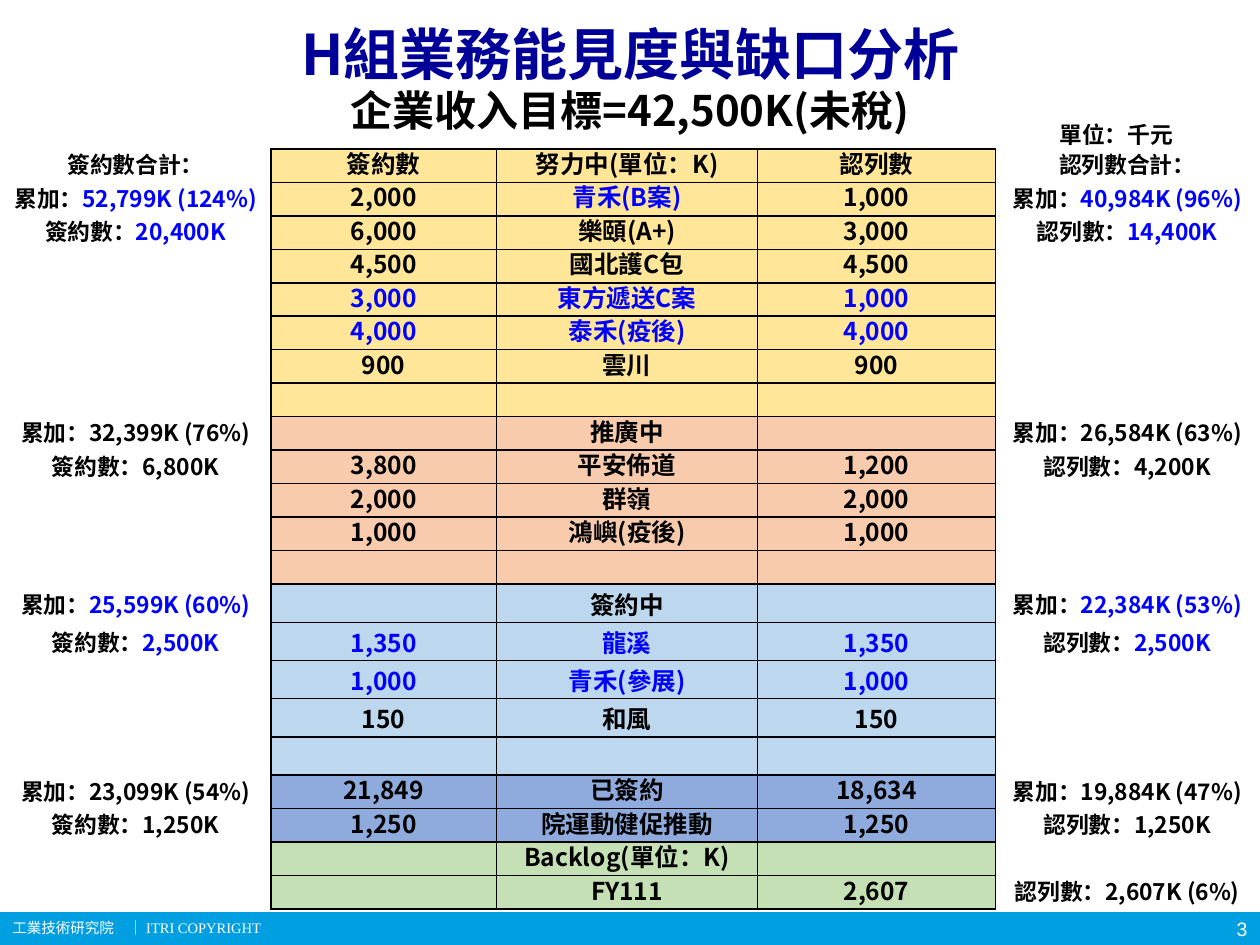
"""Build the group H business visibility and gap analysis slide."""
from lxml.etree import SubElement
from pptx import Presentation
from pptx.dml.color import RGBColor
from pptx.enum.shapes import MSO_SHAPE as Shape
from pptx.enum.text import MSO_ANCHOR as Anchor, PP_ALIGN as Align
from pptx.oxml.ns import qn
from pptx.util import Cm, Pt

COLORS = {
    "black": "000000", "white": "FFFFFF", "blue": "0000FF", "navy": "000099", "footer": "009FE2",
    "effort": "FFE699", "promotion": "F8CBAD", "signing": "BDD7EE", "signed": "8FAADC", "backlog": "C5E0B4",
}
FONT = "Noto Sans CJK SC"
SECTIONS = [
    ("effort", [
        ("簽約數合計：", "簽約數", "努力中(單位：K)", "認列數", "認列數合計："),
        ("累加：*52,799K (124%)", "2,000", "*青禾(B案)", "1,000", "累加：*40,984K (96%)"),
        ("簽約數：*20,400K", "6,000", "樂頤(A+)", "3,000", "認列數：*14,400K"),
        ("", "4,500", "國北護C包", "4,500", ""),
        ("", "*3,000", "*東方遞送C案", "*1,000", ""),
        ("", "*4,000", "*泰禾(疫後)", "*4,000", ""),
        ("", "900", "雲川", "900", ""),
        ("", "", "", "", ""),
    ]),
    ("promotion", [
        ("累加：32,399K (76%)", "", "推廣中", "", "累加：26,584K (63%)"),
        ("簽約數：6,800K", "3,800", "平安佈道", "1,200", "認列數：4,200K"),
        ("", "2,000", "群嶺", "2,000", ""),
        ("", "1,000", "鴻嶼(疫後)", "1,000", ""),
        ("", "", "", "", ""),
    ]),
    ("signing", [
        ("累加：*25,599K (60%)", "", "簽約中", "", "累加：*22,384K (53%)"),
        ("簽約數：*2,500K", "*1,350", "*龍溪", "*1,350", "認列數：*2,500K"),
        ("", "*1,000", "*青禾(參展)", "*1,000", ""),
        ("", "150", "和風", "150", ""),
        ("", "", "", "", ""),
    ]),
    ("signed", [
        ("累加：23,099K (54%)", "21,849", "已簽約", "18,634", "累加：19,884K (47%)"),
        ("簽約數：1,250K", "1,250", "院運動健促推動", "1,250", "認列數：1,250K"),
    ]),
    ("backlog", [
        ("", "", "Backlog(單位：K)", "", ""),
        ("", "", "FY111", "2,607", "認列數：2,607K (6%)"),
    ]),
]


def write(frame, text, size, color="black", accent="blue", font=FONT, asian=FONT,
          bold=True, align=Align.CENTER, spacing=None):
    para = frame.paragraphs[0]
    para.alignment = align
    if spacing:
        para.line_spacing = Pt(spacing)
    plain, _, marked = text.partition("*")
    for part, shade in ((plain, color), (marked, accent)):
        if part:
            span = para.add_run()
            span.text = part
            span.font.size = Pt(size)
            span.font.bold = bold
            span.font.color.rgb = RGBColor.from_string(COLORS[shade])
            span.font.name = font
            SubElement(span.font._element, qn("a:ea"), typeface=asian)
    if not text:
        SubElement(para._p, qn("a:endParaRPr"), sz="1000")
    return para


deck = Presentation()
deck.slide_width, deck.slide_height = Cm(25.4), Cm(19.05)
page = deck.slides.add_slide(deck.slide_layouts[6])

band = page.shapes.add_shape(Shape.RECTANGLE, Cm(0), Cm(18.39), Cm(25.4), Cm(0.66))
band.shadow.inherit = False
band.fill.solid()
band.fill.fore_color.rgb = RGBColor.from_string(COLORS["footer"])
band.line.fill.background()

number = page.shapes.add_textbox(Cm(23.93), Cm(18.39), Cm(1.47), Cm(0.66)).text_frame
credit = page.shapes.add_textbox(Cm(0), Cm(18.08), Cm(22.71), Cm(0.97)).text_frame
title = page.shapes.add_textbox(Cm(0.03), Cm(0.33), Cm(25.37), Cm(1.47)).text_frame
target = page.shapes.add_textbox(Cm(0), Cm(1.65), Cm(25.4), Cm(1.27)).text_frame
unit = page.shapes.add_textbox(Cm(21.11), Cm(2.31), Cm(4.09), Cm(0.81)).text_frame
for frame in (number, credit, title, target, unit):
    frame.word_wrap = True
for frame in (number, credit, title):
    frame.vertical_anchor = Anchor.MIDDLE
credit.margin_top, credit.margin_bottom = Cm(0.38), Cm(0.1)
target.margin_top = Cm(0.05)

write(number, "3", 11.1, color="white", font="Arial", bold=False, align=Align.RIGHT)
line = write(credit, "工業技術研究院\t│ ITRI COPYRIGHT", 8.3, color="white", font="Times New Roman",
             bold=False, align=Align.LEFT)
stops = SubElement(line._p.get_or_add_pPr(), qn("a:tabLst"))
SubElement(stops, qn("a:tab"), pos=str(Cm(2.34)), algn="l")
write(title, "H組業務能見度與缺口分析", 32, color="navy")
write(target, "企業收入目標=42,500K(未稅)", 24)
write(unit, "單位：千元", 13, font="Noto Sans CJK TC", asian="Noto Sans CJK TC", align=Align.LEFT)

rows = [(section, row) for section, group in SECTIONS for row in group]
tall = sum(section == "signing" for section, _ in rows)
tall_height = Cm(0.77)
short_height = (Cm(15.33) - tall * tall_height) // (len(rows) - tall)
table = page.shapes.add_table(len(rows), 5, Cm(0), Cm(3), Cm(25.37), Cm(15.33)).table
table.first_row = table.horz_banding = False
for column, width in zip(table.columns, (5.46, 4.55, 5.26, 4.8, 5.3)):
    column.width = Cm(width)

for index, (section, row) in enumerate(rows):
    table.rows[index].height = tall_height if section == "signing" else short_height
    for position, text in enumerate(row):
        cell = table.cell(index, position)
        side = position in (0, 4)
        cell.margin_left = cell.margin_right = Cm(0.05)
        cell.margin_top = cell.margin_bottom = Cm(0.03)
        cell.vertical_anchor = Anchor.MIDDLE
        write(cell.text_frame, text, 13 if side else 14, spacing=None if section == "signing" else 17)
        drawn = {0: "R", 4: "L"}.get(position, "LRTB")
        for edge in "LRTB":
            border = SubElement(cell._tc.get_or_add_tcPr(), qn(f"a:ln{edge}"), w=str(Pt(1)))
            if edge in drawn:
                paint = SubElement(border, qn("a:solidFill"))
                SubElement(paint, qn("a:srgbClr"), val=COLORS["black"])
            else:
                SubElement(border, qn("a:noFill"))
        cell.fill.solid()
        cell.fill.fore_color.rgb = RGBColor.from_string(COLORS["white" if side else section])

deck.save("out.pptx")
